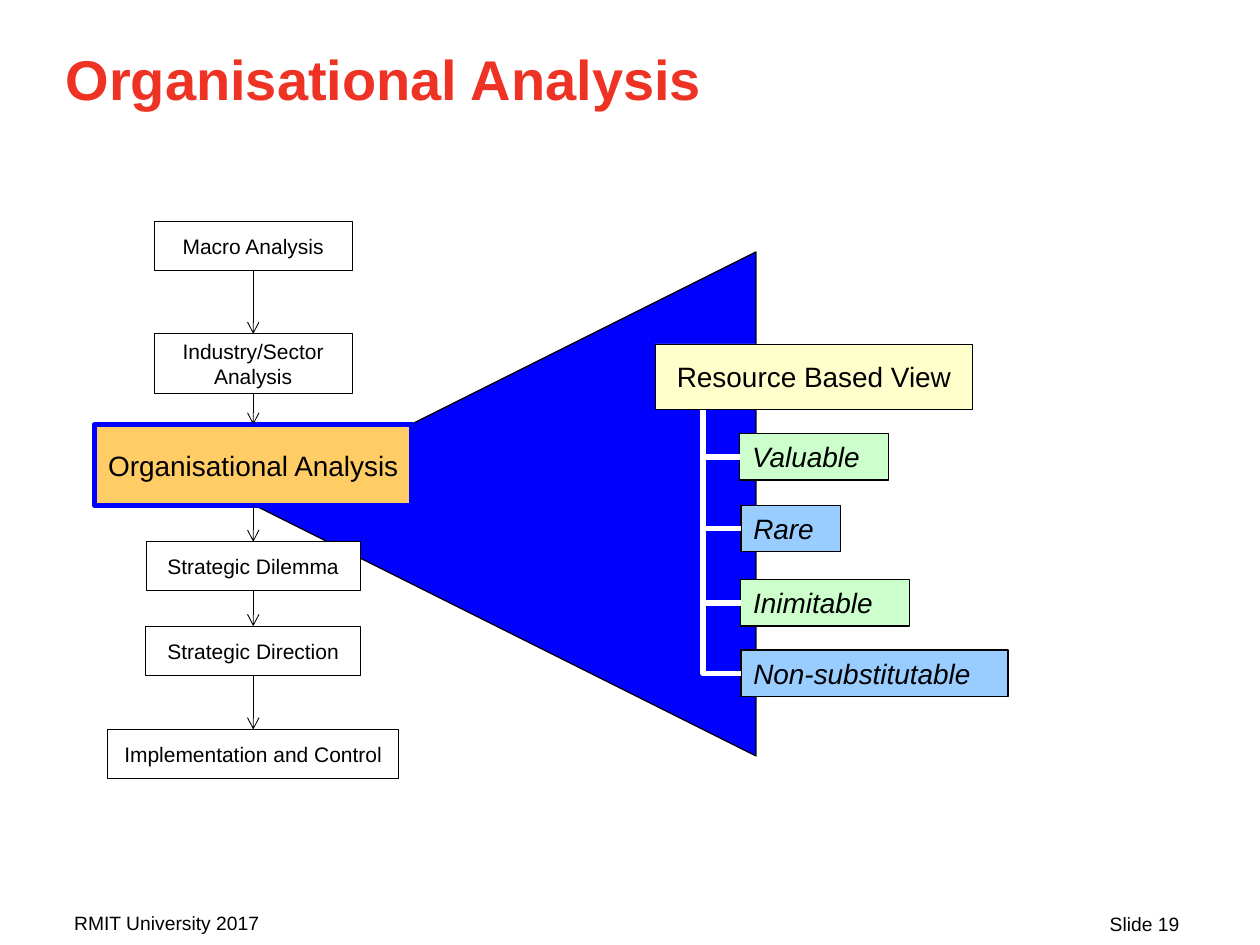
"""Build the Organisational Analysis slide: a strategy flow and its resource view."""
from lxml import etree
from pptx import Presentation, util as u
from pptx.dml.color import RGBColor
from pptx.enum import shapes, text
from pptx.oxml.ns import qn

TITLE = "Organisational Analysis"
FOOT = [("RMIT University 2017", 0.49, 7.18, "LEFT"), ("Slide 19", 7.13, 7.19, "RIGHT")]
MID = 2.01
FLOW = [
    ("Macro Analysis", 1.76, 1.57, 0.39),
    ("Industry/Sector Analysis", 2.65, 1.57, 0.47),
    (TITLE, 3.37, 2.52, 0.64),
    ("Strategic Dilemma", 4.3, 1.7, 0.39),
    ("Strategic Direction", 4.97, 1.71, 0.39),
    ("Implementation and Control", 5.79, 2.31, 0.39),
]
WEDGE = [(6.12, 2.46), (2.48, 3.56), (6.12, 6.19)]
VIEW = ("Resource Based View", 5.2, 2.73, 2.52, 0.52)
STEM = 5.58
TRAITS = [
    ("Valuable", 5.87, 3.44, 1.18),
    ("Rare", 5.88, 4.01, 0.79),
    ("Inimitable", 5.88, 4.6, 1.34),
    ("Non-substitutable", 5.88, 5.16, 2.12),
]
TALL = 0.37
TINTS = ["CCFFCC", "99CCFF"]


def paint(part, hue):
    part.rgb = RGBColor.from_string(hue)


def write(shape, words, size, align="LEFT", anchor="TOP", hue="000000", bold=False, slant=False):
    frame = shape.text_frame
    frame.word_wrap = True
    frame.vertical_anchor = getattr(text.MSO_ANCHOR, anchor)
    line = frame.paragraphs[0]
    line.text = words
    line.alignment = getattr(text.PP_ALIGN, align)
    font = line.font
    font.name, font.size, font.bold, font.italic = "Arial", u.Pt(size), bold, slant
    paint(font.color, hue)
    return frame


def dress(shape, fill, edge, width):
    shape.shadow.inherit = False
    shape.fill.solid()
    paint(shape.fill.fore_color, fill)
    paint(shape.line.color, edge)
    shape.line.width = u.Pt(width)


def box(slide, place, fill, edge="000000", width=0.5):
    shape = slide.shapes.add_shape(shapes.MSO_SHAPE.RECTANGLE, *map(u.Inches, place))
    dress(shape, fill, edge, width)
    return shape


def label(slide, words, place, size, fill, edge="000000", width=0.5):
    shape = box(slide, place, fill, edge, width)
    frame = write(shape, words, size, "CENTER", "MIDDLE")
    frame.margin_left = frame.margin_right = u.Inches(0.05)


def link(slide, kind, ends, hue, width):
    line = slide.shapes.add_connector(kind, *map(u.Inches, ends))
    paint(line.line.color, hue)
    line.line.width = u.Pt(width)
    etree.SubElement(line._element.spPr, qn("a:effectLst"))
    return line


def arrow(slide, top, end):
    line = link(slide, shapes.MSO_CONNECTOR.STRAIGHT, (MID, top, MID, end), "000000", 0.5)
    etree.SubElement(line.line._get_or_add_ln(), qn("a:tailEnd"), type="arrow")


def elbow(slide, left, top, right, end):
    wide, high = right - left, end - top
    x, y = (left + right - high) / 2, (top + end - wide) / 2
    line = link(slide, shapes.MSO_CONNECTOR.ELBOW, (x, y, x + high, y + wide), "FFFFFF", 3.25)
    props = line._element.spPr
    props.find(qn("a:prstGeom")).set("prst", "bentConnector2")
    frame = props.find(qn("a:xfrm"))
    frame.set("rot", "16200000")
    frame.set("flipH", "1")


def main():
    deck = Presentation()
    deck.slide_width, deck.slide_height = u.Inches(10), u.Inches(7.5)
    slide = deck.slides.add_slide(deck.slide_layouts[5])

    build = slide.shapes.build_freeform(*WEDGE[0], scale=u.Inches(1))
    build.add_line_segments(WEDGE[1:], close=True)
    dress(build.convert_to_shape(), "0000FF", "000000", 0)

    title = slide.shapes.title
    title.left, title.top, title.width, title.height = map(u.Inches, (0.42, 0.3, 9, 1.01))
    write(title, TITLE, 32, hue="EE3224", bold=True)

    for words, top, wide, high in FLOW:
        place = (MID - wide / 2, top, wide, high)
        if words == TITLE:
            label(slide, words, place, 16, "FFCC66", "0000FF", 3)
        else:
            label(slide, words, place, 12, "FFFFFF")
    for (_, top, _, high), (_, end, _, _) in zip(FLOW, FLOW[1:]):
        arrow(slide, top + high, end)

    for i, (words, left, top, wide) in enumerate(TRAITS):
        shape = box(slide, (left, top, wide, TALL), TINTS[i % 2], width=0.75)
        frame = write(shape, words, 16, slant=True)
        frame.auto_size = text.MSO_AUTO_SIZE.SHAPE_TO_FIT_TEXT
        elbow(slide, STEM, VIEW[2] + VIEW[4], left, top + TALL / 2)
    label(slide, VIEW[0], VIEW[1:], 16, "FFFFCC")

    for words, left, top, align in FOOT:
        note = slide.shapes.add_textbox(*map(u.Inches, (left, top, 2.33, 0.24)))
        write(note, words, 11, align)
    deck.save("out.pptx")


if __name__ == "__main__":
    main()
